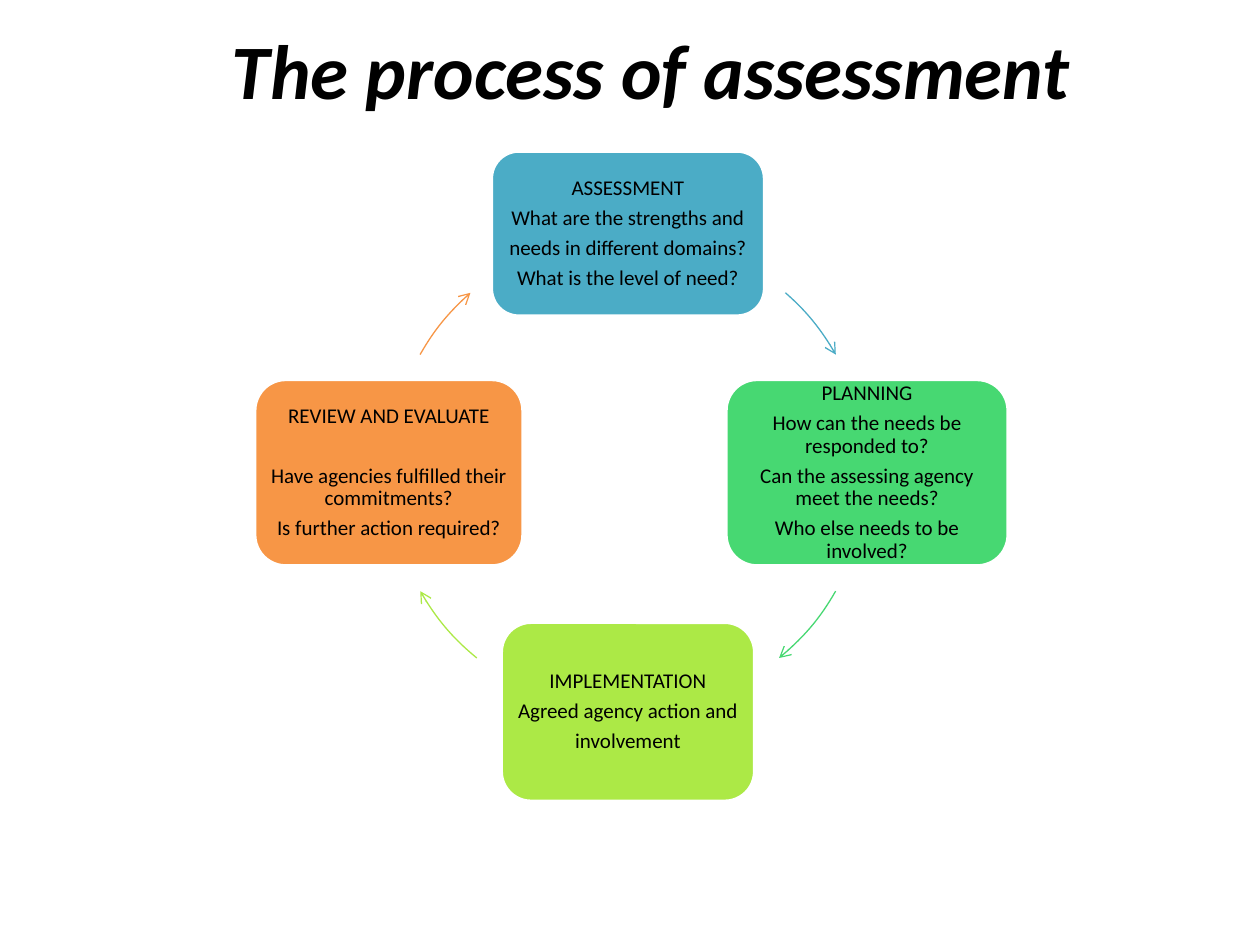
import math

from lxml import etree
from pptx import Presentation
from pptx.dml.color import RGBColor
from pptx.enum.shapes import MSO_SHAPE
from pptx.enum.text import MSO_ANCHOR, PP_ALIGN
from pptx.oxml.ns import qn
from pptx.util import Cm, Pt

ROUNDED_RECTANGLE = MSO_SHAPE.ROUNDED_RECTANGLE
ARC = MSO_SHAPE.ARC
TOP, MIDDLE = MSO_ANCHOR.TOP, MSO_ANCHOR.MIDDLE
CENTER = PP_ALIGN.CENTER

BLACK = RGBColor(0x00, 0x00, 0x00)
WHITE = RGBColor(0xFF, 0xFF, 0xFF)
BLUE = RGBColor(0x4B, 0xAC, 0xC6)
GREEN = RGBColor(0x47, 0xD8, 0x72)
LIME = RGBColor(0xAC, 0xE9, 0x46)
ORANGE = RGBColor(0xF7, 0x96, 0x46)

TITLE_ONLY = 5
RING_X, RING_Y, RING_RADIUS = 12.66, 9.53, 4.82
PARAGRAPH_GAP = 4.2
WIDE_GAP = 21.3

# Clockwise from the top: colour, width, height, gap after the heading,
# start and end angle of the arrow to the next stage, lines of text
STAGES = [
    (BLUE, 5.51, 3.33, PARAGRAPH_GAP, 311.2, 330.4,
     ["ASSESSMENT", "What are the strengths and",
      "needs in different domains?", "What is the level of need?"]),
    (GREEN, 5.69, 3.76, PARAGRAPH_GAP, 29.7, 50.8,
     ["PLANNING", "How can the needs be responded to?",
      "Can the assessing agency meet the needs?",
      "Who else needs to be involved?"]),
    (LIME, 5.11, 3.61, PARAGRAPH_GAP, 129.2, 150.3,
     ["IMPLEMENTATION", "Agreed agency action and", "involvement"]),
    (ORANGE, 5.41, 3.76, WIDE_GAP, 209.6, 228.8,
     ["REVIEW AND EVALUATE", "Have agencies fulfilled their commitments?",
      "Is further action required?"]),
]


class CycleSlide:
    font_name = "Calibri"

    def __init__(self, slide):
        self.slide = slide

    def add_run(self, paragraph, text, size, emphasis=False):
        run = paragraph.add_run()
        run.text = text
        font = run.font
        font.name = self.font_name
        font.size = Pt(size)
        font.color.rgb = BLACK
        font.bold = font.italic = emphasis

    def title(self, text):
        title = self.slide.shapes.title
        title.left, title.top = Cm(1.7), Cm(0.33)
        title.width, title.height = Cm(22.86), Cm(3.18)
        title.text_frame.vertical_anchor = TOP
        paragraph = title.text_frame.paragraphs[0]
        paragraph.alignment = CENTER
        self.add_run(paragraph, text, 44, emphasis=True)

    def stage(self, center_x, center_y, width, height, color, lines, heading_gap):
        box = self.slide.shapes.add_shape(
            ROUNDED_RECTANGLE, Cm(center_x - width / 2), Cm(center_y - height / 2),
            Cm(width), Cm(height))
        box.shadow.inherit = False
        box.fill.solid()
        box.fill.fore_color.rgb = color
        box.line.color.rgb = WHITE
        box.line.width = Pt(2)
        frame = box.text_frame
        frame.word_wrap = True
        frame.vertical_anchor = MIDDLE
        frame.margin_left = frame.margin_right = Cm(0.12)
        frame.margin_top = frame.margin_bottom = Cm(0.12)
        for index, line in enumerate(lines):
            paragraph = frame.add_paragraph() if index else frame.paragraphs[0]
            paragraph.alignment = CENTER
            paragraph.line_spacing = 0.9
            paragraph.space_after = Pt(PARAGRAPH_GAP if index else heading_gap)
            self.add_run(paragraph, line, 12)

    def ring_arrow(self, start_angle, end_angle, color):
        """Draw a clockwise arrow along the ring; angles in degrees from the right."""
        arc = self.slide.shapes.add_shape(
            ARC, Cm(RING_X - RING_RADIUS), Cm(RING_Y - RING_RADIUS),
            Cm(2 * RING_RADIUS), Cm(2 * RING_RADIUS))
        for index, angle in enumerate((start_angle, end_angle)):
            # An adjustment of 1 is 100000 units; a degree is 60000 units
            arc.adjustments[index] = angle * 0.6
        arc.shadow.inherit = False
        arc.fill.background()
        arc.line.color.rgb = color
        arc.line.width = Pt(0.75)
        line = arc.line._get_or_add_ln()
        etree.SubElement(line, qn("a:tailEnd"), type="arrow")


def main():
    presentation = Presentation()
    presentation.slide_width, presentation.slide_height = Cm(25.4), Cm(19.05)
    layout = presentation.slide_layouts[TITLE_ONLY]
    cycle = CycleSlide(presentation.slides.add_slide(layout))
    cycle.title("The process of assessment")
    for index, stage in enumerate(STAGES):
        color, width, height, heading_gap, start_angle, end_angle, lines = stage
        angle = math.radians(90 * index - 90)
        center_x = RING_X + RING_RADIUS * math.cos(angle)
        center_y = RING_Y + RING_RADIUS * math.sin(angle)
        cycle.stage(center_x, center_y, width, height, color, lines, heading_gap)
        cycle.ring_arrow(start_angle, end_angle, color)
    presentation.save("out.pptx")


if __name__ == "__main__":
    main()
